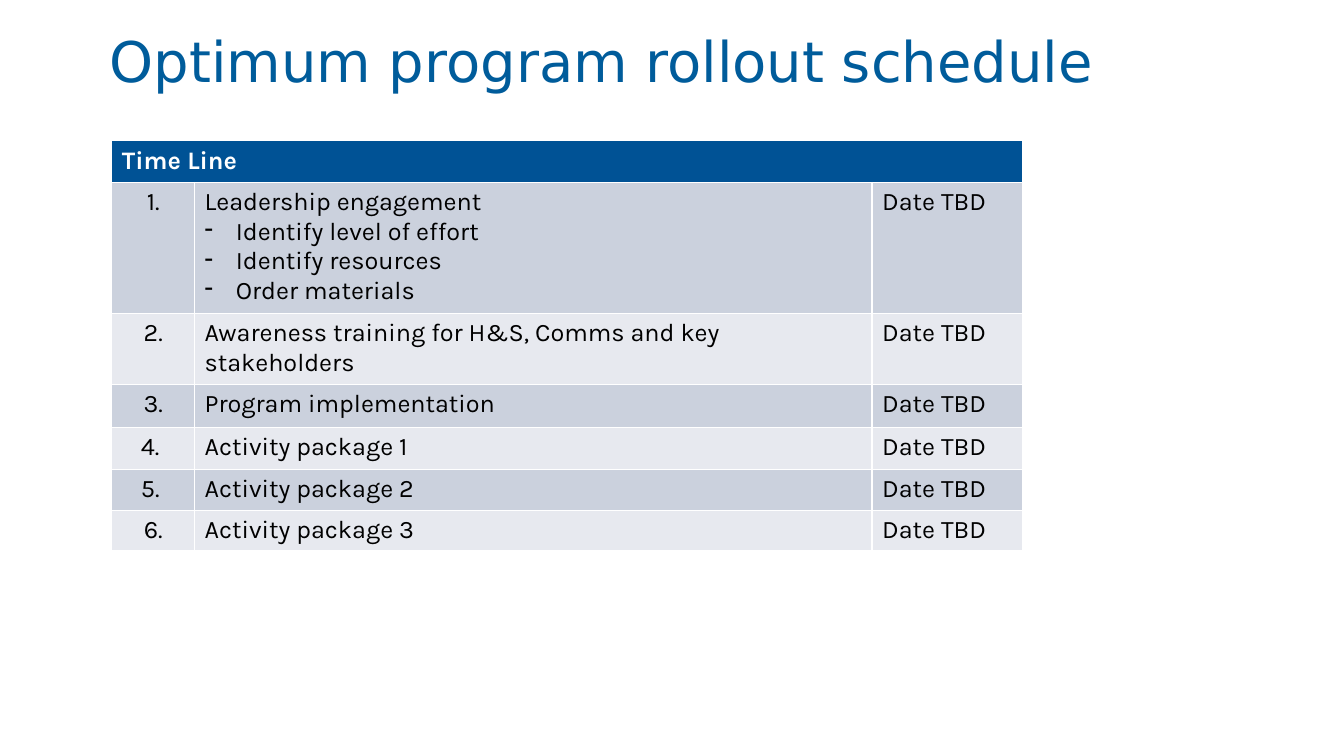
from dataclasses import dataclass

from pptx import Presentation
from pptx.dml.color import RGBColor
from pptx.enum.text import MSO_ANCHOR, PP_ALIGN
from pptx.oxml import parse_xml
from pptx.oxml.ns import nsdecls
from pptx.table import _Cell
from pptx.text.text import _Paragraph
from pptx.util import Inches, Pt

TITLE_BLUE = RGBColor(0x00, 0x5C, 0x9B)
HEADER_BLUE = RGBColor(0x00, 0x52, 0x95)
BAND_DARK = RGBColor(0xCB, 0xD1, 0xDD)
BAND_LIGHT = RGBColor(0xE7, 0xE9, 0xEF)
WHITE = RGBColor(0xFF, 0xFF, 0xFF)
BLACK = RGBColor(0x00, 0x00, 0x00)

TITLE_FONT = "DejaVu Sans"
TABLE_FONT = "Karla"
COLUMN_WIDTHS = (0.82, 6.72, 1.49)
HEADER_HEIGHT = 0.42


@dataclass(frozen=True)
class Step:
    number: str
    activity: str
    height: float
    details: tuple[str, ...] = ()
    date: str = "Date TBD"


STEPS = (
    Step("1.", "Leadership engagement", 1.23,
         ("Identify level of effort", "Identify resources", "Order materials")),
    Step("2.", "Awareness training for H&S, Comms and key stakeholders", 0.44),
    Step("3.", "Program implementation", 0.43),
    Step("4. ", "Activity package 1", 0.42),
    Step("5. ", "Activity package 2", 0.39),
    Step("6.", "Activity package 3", 0.38),
)


def add_span(para: _Paragraph, text: str, font: str, size: float,
             color: RGBColor, bold: bool = False) -> None:
    span = para.add_run()
    span.text = text
    span.font.name = font
    span.font.size = Pt(size)
    span.font.bold = bold
    span.font.color.rgb = color


def add_dash(para: _Paragraph) -> None:
    properties = para._p.get_or_add_pPr()
    properties.set("marL", str(Inches(0.31)))
    properties.set("indent", str(Inches(-0.31)))
    properties.append(parse_xml(f'<a:buChar {nsdecls("a")} char="-"/>'))


def style_cell(cell: _Cell, fill: RGBColor) -> None:
    cell.fill.solid()
    cell.fill.fore_color.rgb = fill
    properties = cell._tc.get_or_add_tcPr()
    for position, side in enumerate(("lnL", "lnR", "lnT", "lnB")):
        properties.insert(position, parse_xml(
            f'<a:{side} {nsdecls("a")} w="{Pt(1)}"><a:solidFill>'
            f'<a:srgbClr val="{WHITE}"/></a:solidFill></a:{side}>'))


def write_cell(cell: _Cell, text: str, align: PP_ALIGN = PP_ALIGN.LEFT,
               details: tuple[str, ...] = ()) -> None:
    para = cell.text_frame.paragraphs[0]
    para.alignment = align
    add_span(para, text, TABLE_FONT, 18, BLACK)
    for detail in details:
        para = cell.text_frame.add_paragraph()
        add_dash(para)
        add_span(para, detail, TABLE_FONT, 18, BLACK)


def main() -> None:
    deck = Presentation()
    deck.slide_width = Inches(13.33)
    deck.slide_height = Inches(7.5)
    page = deck.slides.add_slide(deck.slide_layouts[6])

    # Title
    box = page.shapes.add_textbox(Inches(0.99), Inches(0.16), Inches(11.46), Inches(0.87))
    box.text_frame.word_wrap = True
    box.text_frame.vertical_anchor = MSO_ANCHOR.MIDDLE
    add_span(box.text_frame.paragraphs[0], "Optimum program rollout schedule",
             TITLE_FONT, 40, TITLE_BLUE)

    # Table grid
    heights = (HEADER_HEIGHT, *(step.height for step in STEPS))
    table = page.shapes.add_table(
        len(heights), len(COLUMN_WIDTHS), Inches(1.11), Inches(1.39),
        Inches(sum(COLUMN_WIDTHS)), Inches(sum(heights))).table
    for column, width in zip(table.columns, COLUMN_WIDTHS):
        column.width = Inches(width)
    for row_number, (row, height) in enumerate(zip(table.rows, heights)):
        row.height = Inches(height)
        band = BAND_DARK if row_number % 2 else BAND_LIGHT
        for cell in row.cells:
            style_cell(cell, band if row_number else HEADER_BLUE)

    # Header
    header = table.cell(0, 0)
    header.merge(table.cell(0, len(COLUMN_WIDTHS) - 1))
    header.vertical_anchor = MSO_ANCHOR.MIDDLE
    add_span(header.text_frame.paragraphs[0], "Time Line", TABLE_FONT, 18, WHITE, bold=True)

    # Steps
    for row_number, step in enumerate(STEPS, start=1):
        write_cell(table.cell(row_number, 0), step.number, PP_ALIGN.CENTER)
        write_cell(table.cell(row_number, 1), step.activity, details=step.details)
        write_cell(table.cell(row_number, 2), step.date)

    deck.save("out.pptx")


if __name__ == "__main__":
    main()
